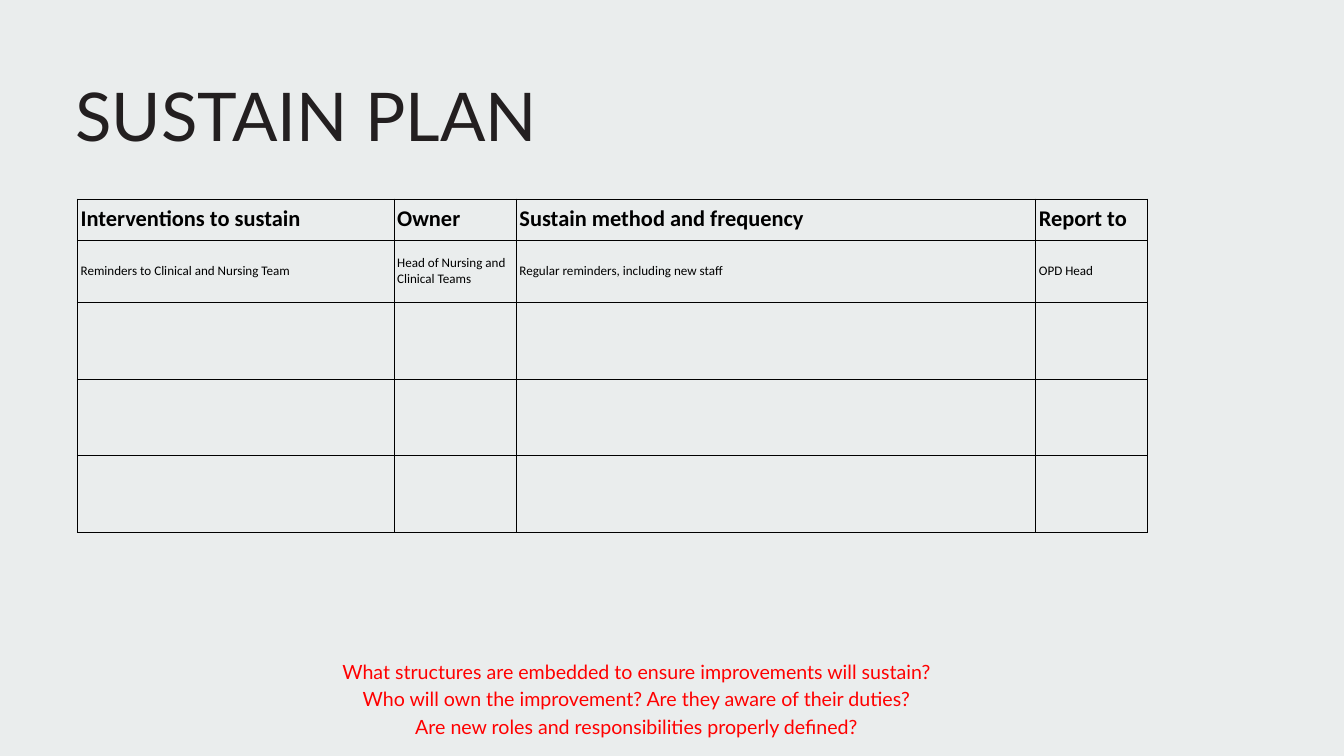
from lxml import etree
from pptx import Presentation
from pptx.dml.color import RGBColor
from pptx.enum.text import MSO_ANCHOR, PP_ALIGN
from pptx.oxml.ns import qn
from pptx.util import Inches, Pt

LEFT, CENTER = PP_ALIGN.LEFT, PP_ALIGN.CENTER
TOP, MIDDLE = MSO_ANCHOR.TOP, MSO_ANCHOR.MIDDLE
BACKGROUND = RGBColor(0xEA, 0xED, 0xED)
INK = RGBColor(0x23, 0x1F, 0x20)
RED = RGBColor(0xFF, 0x00, 0x00)
BLACK = RGBColor(0x00, 0x00, 0x00)


def write(frame, text, size, color, font="Lato", bold=False, align=LEFT,
          spacing=None, anchor=TOP, side=0):
    frame.word_wrap = True
    frame.vertical_anchor = anchor
    frame.margin_left = frame.margin_right = Inches(side)
    frame.margin_top = frame.margin_bottom = 0
    for index, line in enumerate(text.split("\n")):
        para = frame.add_paragraph() if index else frame.paragraphs[0]
        para.alignment = align
        if spacing:
            para.line_spacing = Pt(spacing)
        span = para.add_run()
        span.text = line
        span.font.name = font
        span.font.size = Pt(size)
        span.font.bold = bold
        span.font.color.rgb = color


def add_border(cell, side, width):
    line = etree.SubElement(cell._tc.get_or_add_tcPr(), qn(f"a:ln{side}"), w=str(Pt(width)))
    fill = etree.SubElement(line, qn("a:solidFill"))
    etree.SubElement(fill, qn("a:srgbClr"), val=str(BLACK))


deck = Presentation()
deck.slide_width, deck.slide_height = Inches(20), Inches(11.25)
page = deck.slides.add_slide(deck.slide_layouts[5])
page.background.fill.solid()
page.background.fill.fore_color.rgb = BACKGROUND

title = page.shapes.title
title.left, title.top = Inches(1.12), Inches(1.11)
title.width, title.height = Inches(17.75), Inches(1.2)
write(title.text_frame, "SUSTAIN PLAN", 72, INK, spacing=86.4)

questions = page.shapes.add_textbox(Inches(1.12), Inches(9.76), Inches(16.7), Inches(1.61))
write(questions.text_frame,
      "What structures are embedded to ensure improvements will sustain?\n"
      "Who will own the improvement? Are they aware of their duties?\n"
      "Are new roles and responsibilities properly defined?",
      21, RED, align=CENTER, spacing=29.4)

rows = [
    ["Interventions to sustain", "Owner", "Sustain method and frequency", "Report to"],
    ["Reminders to Clinical and Nursing Team", "Head of Nursing and Clinical Teams",
     "Regular reminders, including new staff", "OPD Head"],
] + [[""] * 4] * 3
widths = [4.71, 1.82, 7.73, 1.67]
heights = [0.61, 0.93, 1.14, 1.14, 1.14]
plan = page.shapes.add_table(len(rows), len(widths), Inches(1.15), Inches(2.96),
                             Inches(sum(widths)), Inches(sum(heights))).table
plan.horz_banding = False
for column, width in zip(plan.columns, widths):
    column.width = Inches(width)
for row, height in zip(plan.rows, heights):
    row.height = Inches(height)

last_row, last_column = len(rows) - 1, len(widths) - 1
for r, texts in enumerate(rows):
    for c, text in enumerate(texts):
        cell = plan.cell(r, c)
        if text:
            write(cell.text_frame, text, 14 if r else 24, BLACK, font="Calibri", bold=r == 0)
        cell.vertical_anchor = MIDDLE
        cell.margin_left = cell.margin_right = Inches(0.05)
        cell.margin_top = cell.margin_bottom = 0
        outer = {"L": c == 0, "R": c == last_column, "T": r == 0, "B": r == last_row}
        for side, is_outer in outer.items():
            add_border(cell, side, 1 if is_outer else 0.25)
        cell.fill.background()

deck.save("out.pptx")
